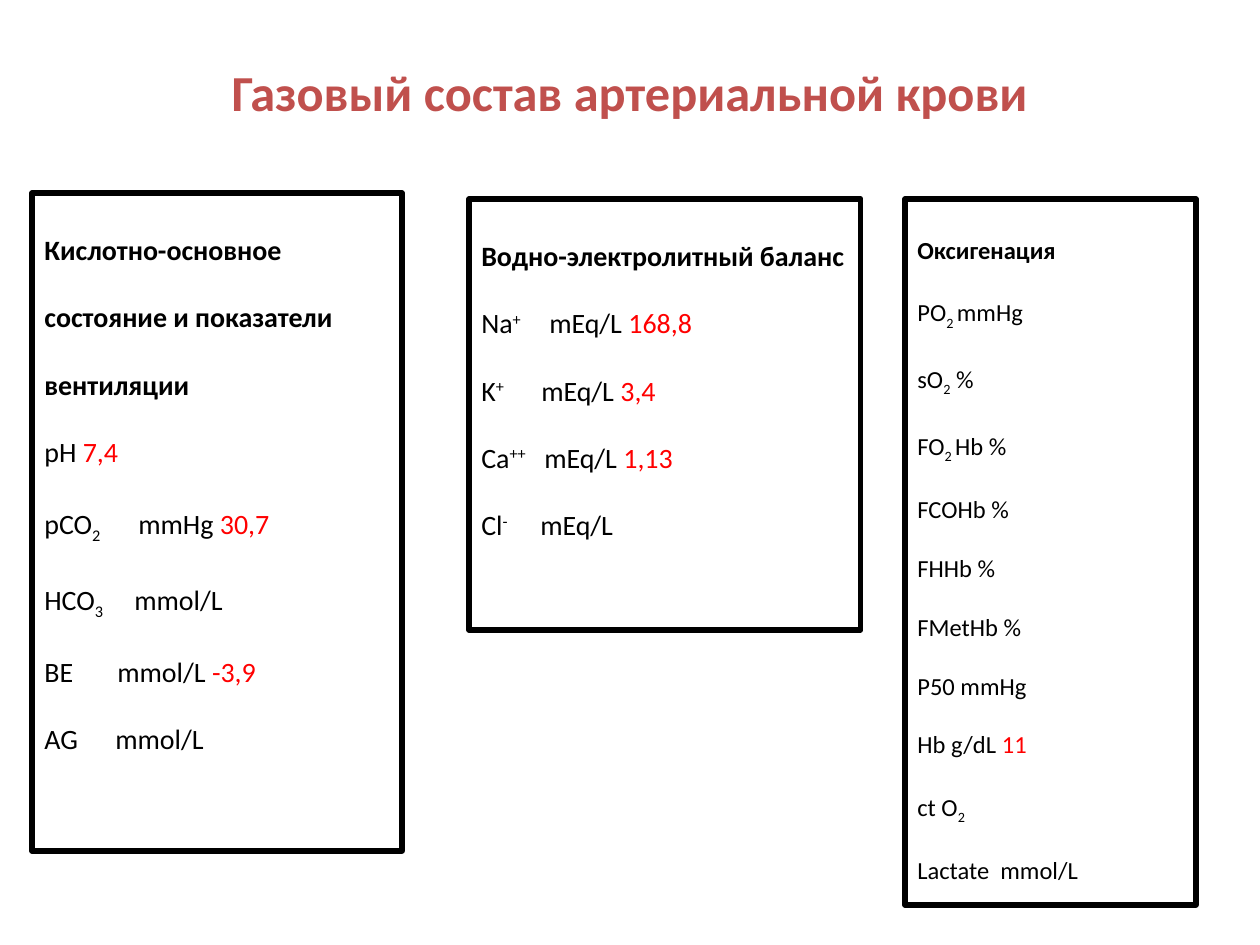
from lxml.etree import SubElement
from pptx import Presentation
from pptx.dml.color import RGBColor
from pptx.enum.shapes import MSO_SHAPE
from pptx.enum.text import MSO_ANCHOR, PP_ALIGN
from pptx.oxml.ns import qn
from pptx.util import Emu, Pt

PX = 914400 / 126
FONT = "Calibri"
BLACK = RGBColor(0x00, 0x00, 0x00)
WHITE = RGBColor(0xFF, 0xFF, 0xFF)
RED = RGBColor(0xFF, 0x00, 0x00)
TITLE_RED = RGBColor(0xC0, 0x50, 0x4D)
BASELINES = {"sub": -25000, "sup": 30000}

# Each row: position of the unit column (or None), then (text, style) parts
ACID_BASE = [
    (None, ("Кислотно-основное состояние и показатели вентиляции", "bold")),
    (None, ("pH ", ""), ("7,4", "red")),
    (94, ("pCO", ""), ("2", "sub"), ("\tmmHg ", ""), ("30,7", "red")),
    (90, ("HCO", ""), ("3", "sub"), ("\tmmol/L", "")),
    (73, ("BE\tmmol/L ", ""), ("-3,9", "red")),
    (71, ("AG\tmmol/L", "")),
]
ELECTROLYTES = [
    (None, ("Водно-электролитный баланс", "bold")),
    (68, ("Na", ""), ("+", "sup"), ("\tmEq/L ", ""), ("168,8", "red")),
    (60, ("K", ""), ("+", "sup"), ("\tmEq/L ", ""), ("3,4", "red")),
    (63, ("Ca", ""), ("++", "sup"), ("\tmEq/L ", ""), ("1,13", "red")),
    (59, ("Cl", ""), ("-", "sup"), ("\tmEq/L", "")),
]
OXYGENATION = [
    (None, ("Оксигенация", "bold")),
    (None, ("PO", ""), ("2 ", "sub"), ("mmHg", "")),
    (None, ("sO", ""), ("2", "sub"), (" %", "")),
    (None, ("FO", ""), ("2 ", "sub"), ("Hb %", "")),
    (None, ("FCOHb %", "")),
    (None, ("FHHb %", "")),
    (None, ("FMetHb %", "")),
    (None, ("P50 mmHg", "")),
    (None, ("Hb g/dL ", ""), ("11", "red")),
    (None, ("ct O", ""), ("2", "sub")),
    (83, ("Lactate\tmmol/L", "")),
]


def px(length):
    return Emu(round(length * PX))


def format_run(run, size, color, bold=False):
    run.font.name = FONT
    run.font.size = Pt(size)
    run.font.bold = bold
    run.font.color.rgb = color


def add_title(slide, box, text):
    text_box = slide.shapes.add_textbox(*map(px, box))
    text_frame = text_box.text_frame
    text_frame.word_wrap = True
    text_frame.vertical_anchor = MSO_ANCHOR.MIDDLE
    text_frame.text = text
    paragraph = text_frame.paragraphs[0]
    paragraph.alignment = PP_ALIGN.CENTER
    format_run(paragraph.runs[0], 28.8, TITLE_RED, True)


def fill_row(paragraph, row, size):
    unit_position, *parts = row
    paragraph.alignment = PP_ALIGN.LEFT
    paragraph.line_spacing = 2.0
    if unit_position:
        tab_list = SubElement(paragraph._p.get_or_add_pPr(), qn("a:tabLst"))
        SubElement(tab_list, qn("a:tab"), pos=str(px(unit_position)), algn="l")
    for text, style in parts:
        run = paragraph.add_run()
        run.text = text
        format_run(run, size, RED if style == "red" else BLACK, style == "bold")
        if style in BASELINES:
            run._r.get_or_add_rPr().set("baseline", str(BASELINES[style]))


def add_panel(slide, box, rows, size, fill=None):
    panel = slide.shapes.add_shape(MSO_SHAPE.RECTANGLE, *map(px, box))
    panel.shadow.inherit = False
    if fill is None:
        panel.fill.background()
    else:
        panel.fill.solid()
        panel.fill.fore_color.rgb = fill
    panel.line.color.rgb = BLACK
    panel.line.width = Pt(3)
    text_frame = panel.text_frame
    text_frame.word_wrap = True
    text_frame.vertical_anchor = MSO_ANCHOR.TOP
    for index, row in enumerate(rows):
        paragraph = text_frame.add_paragraph() if index else text_frame.paragraphs[0]
        fill_row(paragraph, row, size)


def main():
    presentation = Presentation()
    presentation.slide_width = px(1260)
    presentation.slide_height = px(945)
    slide = presentation.slides.add_slide(presentation.slide_layouts[6])

    add_title(slide, (63, 38, 1134, 107), "Газовый состав артериальной крови")
    add_panel(slide, (32, 193, 370, 658), ACID_BASE, 16)
    add_panel(slide, (905, 199, 291, 706), OXYGENATION, 14, WHITE)
    add_panel(slide, (469, 199, 392, 431), ELECTROLYTES, 16)

    presentation.save("out.pptx")


if __name__ == "__main__":
    main()
